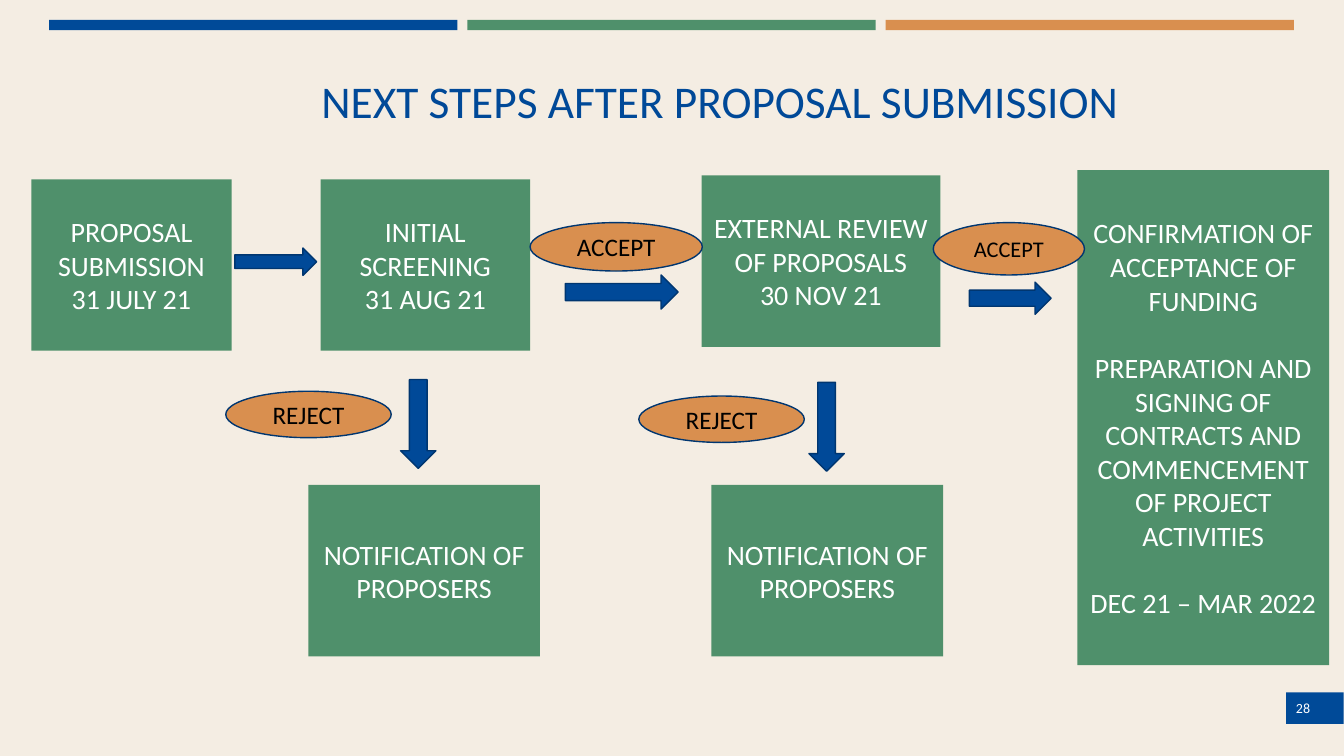
from pptx import Presentation
from pptx.dml.color import RGBColor
from pptx.enum.shapes import MSO_SHAPE as SHAPE
from pptx.enum.text import MSO_ANCHOR as ANCHOR, PP_ALIGN as ALIGN
from pptx.util import Cm, Pt

BLUE, TITLE_BLUE, NAVY = "004A98", "004998", "003670"
GREEN, ORANGE, CREAM = "4F906B", "D98F4F", "F4EDE3"
WHITE, BLACK = "FFFFFF", "000000"


def rgb(value):
    return RGBColor.from_string(value)


class FlowSlide:
    font = "Calibri"

    def __init__(self, prs):
        self.s = prs.slides.add_slide(prs.slide_layouts[5])
        fill = self.s.background.fill
        fill.solid()
        fill.fore_color.rgb = rgb(CREAM)

    def set_text(self, tf, paragraphs, size, color, align=ALIGN.CENTER, gap=0):
        tf.text = "\n".join(paragraphs)
        tf.vertical_anchor = ANCHOR.MIDDLE
        for i, p in enumerate(tf.paragraphs):
            p.alignment = align
            p.space_before = Pt(gap if i else 0)
            for r in p.runs:
                r.font.name, r.font.size = self.font, Pt(size)
                r.font.color.rgb = rgb(color)

    def title(self, text, x, y, w, h):
        sp = self.s.shapes.title
        sp.left, sp.top, sp.width, sp.height = Cm(x), Cm(y), Cm(w), Cm(h)
        self.set_text(sp.text_frame, [text], 32.4, TITLE_BLUE)
        sp.text_frame.paragraphs[0].line_spacing = 0.9

    def shape(self, kind, x, y, w, h, color, line=None):
        sp = self.s.shapes.add_shape(kind, Cm(x), Cm(y), Cm(w), Cm(h))
        sp.shadow.inherit = False
        sp.fill.solid()
        sp.fill.fore_color.rgb = rgb(color)
        if line:
            sp.line.color.rgb = rgb(line)
            sp.line.width = Pt(1)
        else:
            sp.line.fill.background()
        return sp

    def step(self, paragraphs, x, y, w, h=4.32, gap=0):
        sp = self.shape(SHAPE.RECTANGLE, x, y, w, h, GREEN)
        self.set_text(sp.text_frame, paragraphs, 20, WHITE, gap=gap)

    def arrow(self, x, y, w, h, rotation=0):
        sp = self.shape(SHAPE.RIGHT_ARROW, x, y, w, h, TITLE_BLUE, NAVY)
        sp.rotation = rotation

    def decision(self, text, x, y, w, h, size=18):
        sp = self.shape(SHAPE.OVAL, x, y, w, h, ORANGE, NAVY)
        self.set_text(sp.text_frame, [text], size, BLACK)

    def page_number(self, number):
        self.shape(SHAPE.RECTANGLE, 32.41, 17.45, 1.45, 0.79, BLUE)
        tb = self.s.shapes.add_textbox(Cm(32.41), Cm(17.5), Cm(1.14), Cm(0.69))
        self.set_text(tb.text_frame, [number], 10, WHITE, ALIGN.LEFT)


def main():
    prs = Presentation()
    prs.slide_width, prs.slide_height = Cm(33.87), Cm(19.05)
    slide = FlowSlide(prs)

    # Frame: colour bars, page number, title
    for i, color in enumerate((BLUE, GREEN, ORANGE)):
        slide.shape(SHAPE.RECTANGLE, 1.24 + 10.54 * i, 0.5, 10.29, 0.26, color)
    slide.page_number("28")
    slide.title("NEXT STEPS AFTER PROPOSAL SUBMISSION", 2.79, 1.1, 30.71, 3.02)

    # Main steps
    slide.step(["PROPOSAL SUBMISSION", "31 JULY 21"], 0.79, 4.52, 5.05)
    slide.step(["INITIAL SCREENING", "31 AUG 21"], 8.08, 4.52, 5.28)
    slide.step(["EXTERNAL REVIEW OF PROPOSALS", "30 NOV 21"], 17.68, 4.42, 6.02)
    slide.step(["CONFIRMATION OF ACCEPTANCE OF FUNDING",
                "PREPARATION AND SIGNING OF CONTRACTS AND COMMENCEMENT "
                "OF PROJECT ACTIVITIES",
                "DEC 21 – MAR 2022"], 27.15, 4.29, 6.35, 12.47, gap=24)

    # Accepted path
    slide.arrow(5.92, 6.25, 2.06, 0.69)
    slide.arrow(14.25, 6.93, 2.84, 0.86)
    slide.arrow(24.43, 7.11, 2.06, 0.81)
    slide.decision("ACCEPT", 13.36, 5.61, 4.34, 1.22)
    slide.decision("ACCEPT", 23.52, 5.61, 3.81, 1.32, size=16)

    # Rejected paths: notification, arrow and label positions
    for box_x, arrow_x, arrow_y, label_x, label_y in (
            (7.77, 9.42, 10.24, 5.69, 9.86),
            (17.93, 19.71, 10.31, 16.1, 9.98)):
        slide.step(["NOTIFICATION OF PROPOSERS"], box_x, 12.22, 5.84)
        slide.arrow(arrow_x, arrow_y, 2.24, 0.89, rotation=90)
        slide.decision("REJECT", label_x, label_y, 4.17, 1.17)

    prs.save("out.pptx")


if __name__ == "__main__":
    main()
